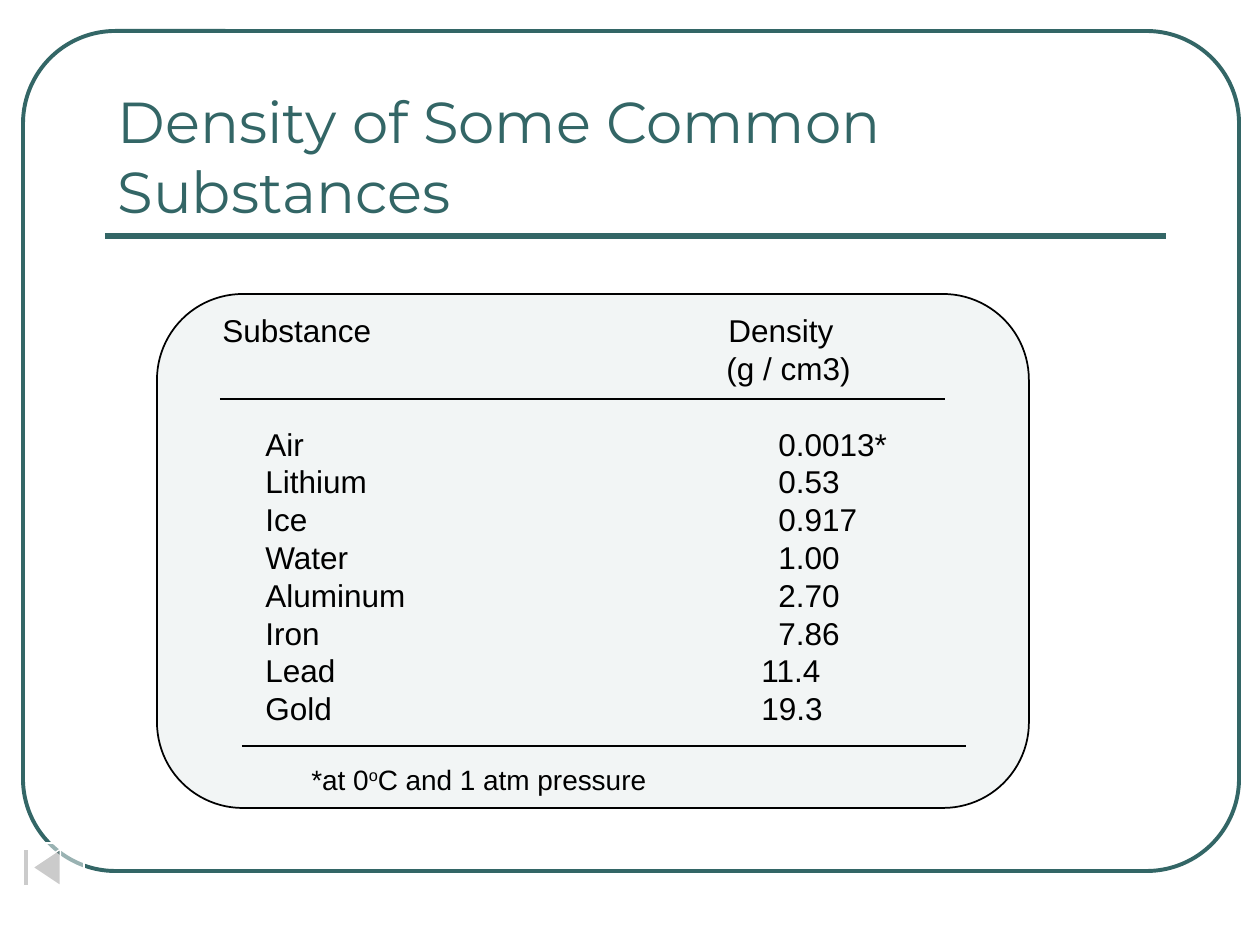
from dataclasses import dataclass

from lxml.etree import SubElement
from pptx import Presentation
from pptx.dml.color import RGBColor
from pptx.enum.shapes import MSO_CONNECTOR, MSO_SHAPE
from pptx.enum.text import MSO_ANCHOR, PP_ALIGN
from pptx.oxml.ns import qn
from pptx.util import Pt


@dataclass(frozen=True)
class Theme:
    teal: RGBColor = RGBColor(0x33, 0x66, 0x66)
    panel: RGBColor = RGBColor(0xD6, 0xE0, 0xE0)
    ink: RGBColor = RGBColor(0, 0, 0)
    white: RGBColor = RGBColor(0xFF, 0xFF, 0xFF)
    title_font: str = "Montserrat"
    body_font: str = "Arial"
    title_size: Pt = Pt(33)
    body_size: Pt = Pt(18)
    note_size: Pt = Pt(16)
    row_pitch: Pt = Pt(21.6)


def px(*values):
    return [round(v * 914400 / 126) for v in values]


def style(r, font, size, color):
    r.font.name = font
    r.font.size = size
    r.font.color.rgb = color


theme = Theme()
prs = Presentation()
prs.slide_width, prs.slide_height = px(1260, 945)
s = prs.slides.add_slide(prs.slide_layouts[5])

panels = [
    (MSO_SHAPE.ROUNDED_RECTANGLE, (23, 31, 1216, 840), 0.11, None, 0, theme.teal, 2.25),
    (MSO_SHAPE.ROUNDED_RECTANGLE, (157, 294, 872, 514), 0.167, theme.panel, 30, theme.ink, 1),
    (MSO_SHAPE.ACTION_BUTTON_BEGINNING, (0, 843, 84, 49), None, theme.white, 50, theme.white, 0.75),
]
for kind, box, radius, fill, opacity, line, width in panels:
    sp = s.shapes.add_shape(kind, *px(*box))
    sp.shadow.inherit = False
    if radius is not None:
        sp.adjustments[0] = radius
    if fill is None:
        sp.fill.background()
    else:
        sp.fill.solid()
        sp.fill.fore_color.rgb = fill
        clr = sp.fill._xPr.find(qn("a:solidFill"))[0]
        SubElement(clr, qn("a:alpha")).set("val", str(opacity * 1000))
    sp.line.color.rgb = line
    sp.line.width = Pt(width)

rules = [
    (105, 1166, 236, theme.teal, 3),
    (220, 945, 399, theme.ink, 1.5),
    (242, 966, 746, theme.ink, 1.5),
]
for left, right, y, color, width in rules:
    rule = s.shapes.add_connector(MSO_CONNECTOR.STRAIGHT, *px(left, y, right, y))
    rule.line.color.rgb = color
    rule.line.width = Pt(width)
    SubElement(rule._element.spPr, qn("a:effectLst"))

title = s.shapes.title
title.left, title.top, title.width, title.height = px(105, 73, 1061, 158)
tf = title.text_frame
tf.text = "Density of Some Common Substances"
tf.vertical_anchor = MSO_ANCHOR.BOTTOM
tf.paragraphs[0].alignment = PP_ALIGN.LEFT
style(tf.paragraphs[0].runs[0], theme.title_font, theme.title_size, theme.teal)

densities = [
    ("Air", "0.0013*"),
    ("Lithium", "0.53"),
    ("Ice", "0.917"),
    ("Water", "1.00"),
    ("Aluminum", "2.70"),
    ("Iron", "7.86"),
    ("Lead", "11.4"),
    ("Gold", "19.3"),
]
lines = [("Substance\tDensity", [506]), ("\t(g / cm3)", [504])]
for name, value in densities:
    extra_digits = value.index(".") - 1
    lines.append((f"\t{name}\t{value}", [43, 556 - 17 * extra_digits]))

tf = s.shapes.add_textbox(*px(210, 305, 766, 428)).text_frame
tf.word_wrap = True
for i, (text, stops) in enumerate(lines):
    p = tf.paragraphs[0] if i == 0 else tf.add_paragraph()
    p.text = text
    p.line_spacing = theme.row_pitch
    if i == 2:
        p.space_before = theme.row_pitch
    tabs = SubElement(p._p.get_or_add_pPr(), qn("a:tabLst"))
    for pos in px(*stops):
        tab = SubElement(tabs, qn("a:tab"))
        tab.set("pos", str(pos))
        tab.set("algn", "l")
    for r in p.runs:
        style(r, theme.body_font, theme.body_size, theme.ink)

tf = s.shapes.add_textbox(*px(299, 756, 363, 47)).text_frame
tf.word_wrap = False
p = tf.paragraphs[0]
for text, baseline in [("*at 0", 0), ("o", 30000), ("C and 1 atm pressure", 0)]:
    r = p.add_run()
    r.text = text
    style(r, theme.body_font, theme.note_size, theme.ink)
    r._r.get_or_add_rPr().set("baseline", str(baseline))

prs.save("out.pptx")
